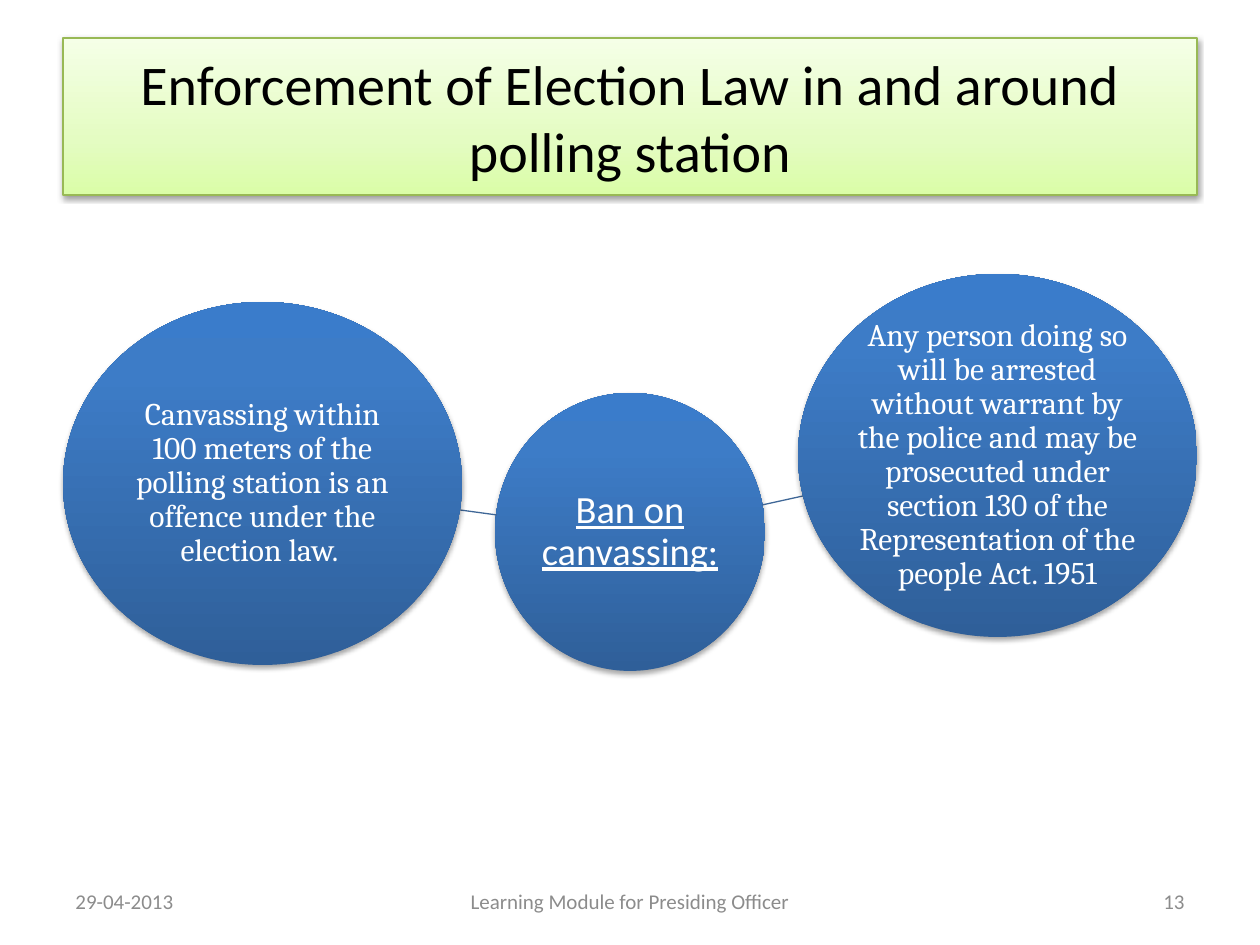
import lxml.etree
import pptx
import pptx.dml.color
import pptx.enum.shapes
import pptx.enum.text
import pptx.oxml.ns
import pptx.util

EMU_PER_PX = 914400 / 126
COLORS = {
    "title_line": "98B955",
    "title_text": "000000",
    "circle_text": "FFFFFF",
    "link": "3F6797",
    "footer": "8C8C8C",
    "shadow": "000000",
}
TITLE_STOPS = [(0, "DAFDA7"), (35, "E4FCC2"), (100, "F5FFE7")]
CIRCLE_STOPS = [(0, "2F5F99"), (80, "3D7CC7"), (100, "3A7CCB")]
ALIGN = pptx.enum.text.PP_ALIGN


def px(*lengths):
    return [pptx.util.Emu(round(length * EMU_PER_PX)) for length in lengths]


def rgb(name):
    return pptx.dml.color.RGBColor.from_string(COLORS[name])


def add_xml(parent, tag, **attributes):
    child = lxml.etree.SubElement(parent, pptx.oxml.ns.qn(tag))
    for key, value in attributes.items():
        child.set(key, str(value))
    return child


def fill_gradient(shape, stops):
    """Fill from bottom to top with (percent, hex) stops."""
    shape.fill.gradient()
    shape.fill.gradient_angle = 90
    stop_list = shape.fill._fill._gradFill.find(pptx.oxml.ns.qn("a:gsLst"))
    for old_stop in list(stop_list):
        stop_list.remove(old_stop)
    for percent, color in stops:
        stop = add_xml(stop_list, "a:gs", pos=percent * 1000)
        add_xml(stop, "a:srgbClr", val=color)


def drop_shadow(shape, opacity, distance):
    shape.shadow.inherit = False
    effects = shape._element.spPr.find(pptx.oxml.ns.qn("a:effectLst"))
    shadow = add_xml(effects, "a:outerShdw", blurRad=pptx.util.Pt(3.1),
                     dist=pptx.util.Pt(distance), dir=90 * 60000, rotWithShape=0)
    color = add_xml(shadow, "a:srgbClr", val=COLORS["shadow"])
    add_xml(color, "a:alpha", val=opacity * 1000)


def write_text(shape, text, size, font, color, align=ALIGN.CENTER):
    frame = shape.text_frame
    frame.word_wrap = True
    frame.vertical_anchor = pptx.enum.text.MSO_ANCHOR.MIDDLE
    paragraph = frame.paragraphs[0]
    paragraph.alignment = align
    run = paragraph.add_run()
    run.text = text
    run.font.size = pptx.util.Pt(size)
    run.font.name = font
    run.font.color.rgb = rgb(color)
    return paragraph


def format_title(slide, text):
    title = slide.shapes.title
    title.left, title.top, title.width, title.height = px(63, 38, 1134, 157)
    fill_gradient(title, TITLE_STOPS)
    title.line.color.rgb = rgb("title_line")
    title.line.width = pptx.util.Pt(0.75)
    drop_shadow(title, 38, 1.6)
    write_text(title, text, 32, "Calibri", "title_text")


def add_circle(slide, box, text, size, font, inset, underline=False):
    circle = slide.shapes.add_shape(pptx.enum.shapes.MSO_SHAPE.OVAL, *px(*box))
    fill_gradient(circle, CIRCLE_STOPS)
    circle.line.fill.background()
    drop_shadow(circle, 35, 1.8)
    frame = circle.text_frame
    frame.margin_left, frame.margin_top, frame.margin_right, frame.margin_bottom = px(*[inset] * 4)
    paragraph = write_text(circle, text, size, font, "circle_text")
    paragraph.line_spacing = 0.9
    if underline:
        paragraph.runs[0].font.underline = True


def add_link(slide, ends):
    link = slide.shapes.add_connector(pptx.enum.shapes.MSO_CONNECTOR.STRAIGHT, *px(*ends))
    link.line.color.rgb = rgb("link")
    link.line.width = pptx.util.Pt(0.75)
    add_xml(link._element.spPr, "a:effectLst")


def add_footer(slide, left, width, text, align):
    footer = slide.shapes.add_textbox(*px(left, 876, width, 50))
    write_text(footer, text, 12, "Calibri", "footer", align)


def main():
    deck = pptx.Presentation()
    deck.slide_width, deck.slide_height = px(1260, 945)
    slide = deck.slides.add_slide(deck.slide_layouts[5])

    format_title(slide, "Enforcement of Election Law in and around polling station")
    add_circle(slide, (495, 393, 270, 278), "Ban on canvassing:", 22, "Calibri", 2, underline=True)
    add_link(slide, (497, 515, 460, 510))
    add_circle(slide, (63, 302, 399, 363),
               "Canvassing within 100 meters of the polling station is an offence "
               "under the election law. ", 18, "Cambria", 1)
    add_link(slide, (762, 505, 803, 496))
    add_circle(slide, (798, 274, 399, 363),
               "Any person doing so will be arrested without warrant by the police "
               "and may be prosecuted under section 130 of the Representation of "
               "the people Act. 1951", 18, "Cambria", 1)

    add_footer(slide, 63, 294, "29-04-2013", ALIGN.LEFT)
    add_footer(slide, 430, 400, "Learning Module for Presiding Officer", ALIGN.CENTER)
    add_footer(slide, 903, 294, "13", ALIGN.RIGHT)
    deck.save("out.pptx")


if __name__ == "__main__":
    main()
